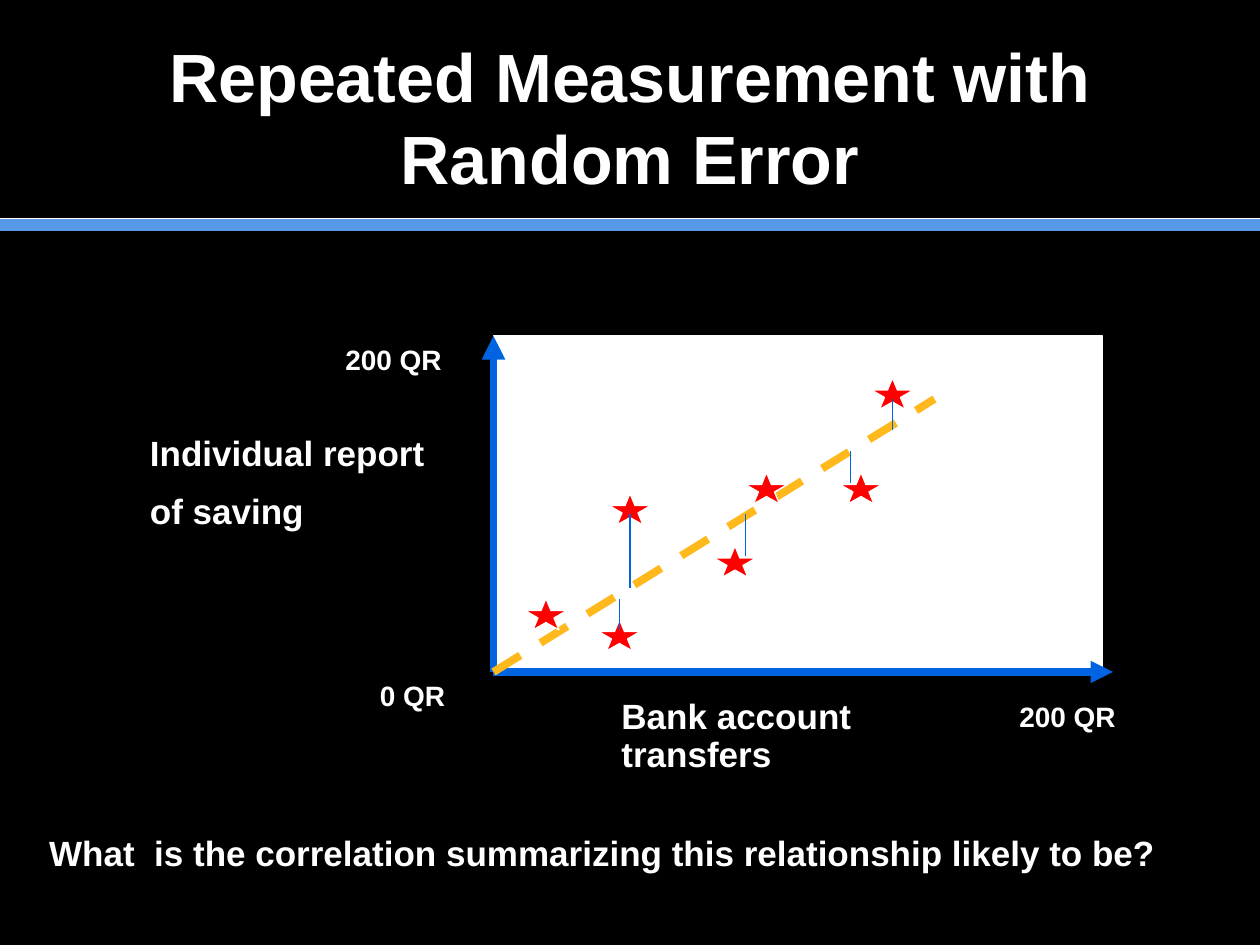
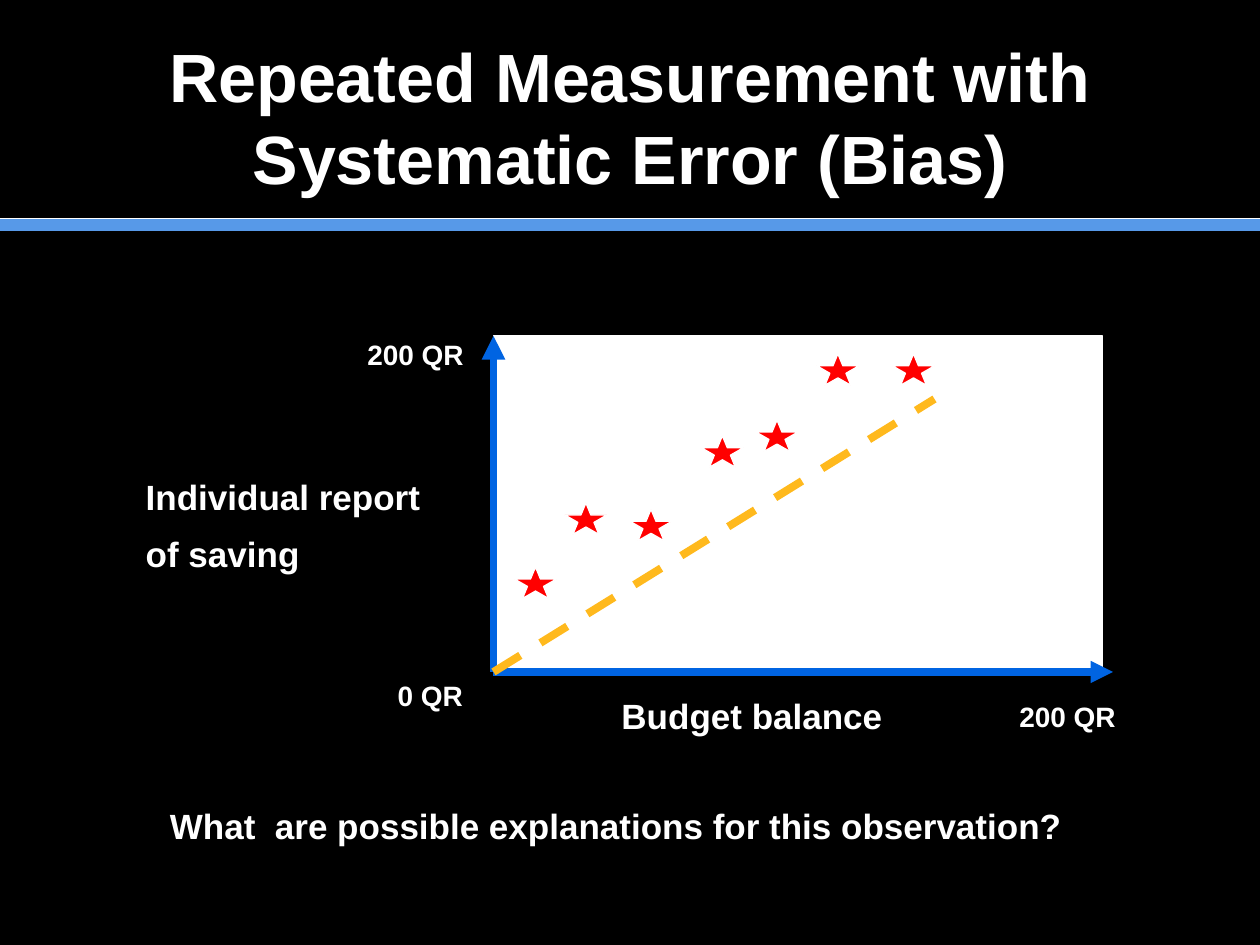
from dataclasses import dataclass
from typing import NamedTuple

from lxml.etree import SubElement
from pptx import Presentation
from pptx.dml.color import RGBColor
from pptx.enum.dml import MSO_LINE_DASH_STYLE as Dash
from pptx.enum.shapes import MSO_CONNECTOR, MSO_SHAPE
from pptx.enum.text import MSO_ANCHOR, PP_ALIGN
from pptx.oxml.ns import qn
from pptx.shapes.autoshape import Shape
from pptx.shapes.connector import Connector
from pptx.slide import Slide
from pptx.util import Inches, Pt

BLACK = RGBColor(0x00, 0x00, 0x00)
WHITE = RGBColor(0xFF, 0xFF, 0xFF)
BAND_BLUE = RGBColor(0x57, 0x99, 0xE8)
AXIS_BLUE = RGBColor(0x00, 0x64, 0xE2)
TREND_GOLD = RGBColor(0xFF, 0xB9, 0x1D)
STAR_RED = RGBColor(0xFF, 0x00, 0x00)

FONT = "Arial"
TITLE_SIZE, BODY_SIZE, TICK_SIZE = 39, 20, 16

# The grid has 120 columns and 90 rows, twelve to the inch.
CELL = Inches(1) // 12
COLUMNS, ROWS = 120, 90


class Point(NamedTuple):
    column: float
    row: float


class Box(NamedTuple):
    column: float
    row: float
    columns: float
    rows: float


class Residual(NamedTuple):
    """A vertical line from a star's row to the trend line."""
    column: float
    star_row: float
    trend_row: float
    width: float = 0.75


class Label(NamedTuple):
    text: str
    box: Box
    size: float = BODY_SIZE
    line_spacing: float | None = None


@dataclass(frozen=True)
class ScatterSlide:
    title: str
    stars: tuple[Point, ...]
    labels: tuple[Label, ...]
    residuals: tuple[Residual, ...] = ()


TITLE_BOX = Box(6, 3.6, 108, 15)
PLOT = Box(47, 32, 58, 32)
ORIGIN = Point(PLOT.column, PLOT.row + PLOT.rows)
Y_AXIS_END = Point(PLOT.column, PLOT.row)
X_AXIS_END = Point(106, ORIGIN.row)
TREND_END = Point(89, 38)
STAR_COLUMNS, STAR_ROWS = 4, 3


def report_label(column: float, row: float) -> Label:
    return Label("Individual report\nof saving", Box(column, row, 29.9, 10.5), line_spacing=0.9)


def x_label(text: str, rows: float) -> Label:
    return Label(text, Box(58, 66, 34, rows), line_spacing=0.9)


def tick(text: str, column: float, row: float) -> Label:
    return Label(text, Box(column, row, 12.4, 4.4), TICK_SIZE)


X_MAXIMUM = tick("200 QR", 95.9, 66)

SLIDES = (
    ScatterSlide(
        title="Repeated Measurement with Random Error",
        stars=(
            Point(57, 59), Point(68, 52), Point(71, 45), Point(80, 45),
            Point(83, 36), Point(58, 47), Point(50, 57),
        ),
        residuals=(
            Residual(60, 49, 56, width=1), Residual(59, 60, 57), Residual(71, 53, 49),
            Residual(81, 46, 43), Residual(85, 38, 41),
        ),
        labels=(
            report_label(13.1, 41),
            x_label("Bank account transfers", 8.5),
            Label("What  is the correlation summarizing this relationship likely to be?",
                  Box(3.5, 78.6, 116.5, 5.3)),
            tick("200 QR", 31.7, 32),
            X_MAXIMUM,
            tick("0 QR", 35, 64),
        ),
    ),
    ScatterSlide(
        title="Repeated Measurement with Systematic Error (Bias)",
        stars=(
            Point(53.8, 47.9), Point(66.8, 41.5), Point(72, 40), Point(77.8, 33.7),
            Point(85, 33.7), Point(60, 48.5), Point(49, 54),
        ),
        labels=(
            report_label(12.7, 45.1),
            tick("0 QR", 36.7, 64),
            tick("200 QR", 33.8, 31.6),
            X_MAXIMUM,
            x_label("Budget balance", 4.8),
            Label("What  are possible explanations for this observation?",
                  Box(15, 76, 105, 5.3)),
        ),
    ),
)


def lengths(cells: tuple[float, ...]) -> list[int]:
    """Turn grid cells into slide lengths."""
    return [round(cell * CELL) for cell in cells]


def add_line(slide: Slide, start: Point, end: Point, color: RGBColor, width: float) -> Connector:
    line = slide.shapes.add_connector(MSO_CONNECTOR.STRAIGHT, *lengths(start), *lengths(end))
    line.line.color.rgb = color
    line.line.width = Pt(width)
    SubElement(line._element.spPr, qn("a:effectLst"))
    return line


def add_axis(slide: Slide, end: Point, width: float) -> None:
    axis = add_line(slide, ORIGIN, end, AXIS_BLUE, width)
    SubElement(axis.line._get_or_add_ln(), qn("a:tailEnd"), type="triangle")


def add_outlined(slide: Slide, preset: MSO_SHAPE, box: Box, fill: RGBColor) -> None:
    """Add a filled shape with a thin white outline."""
    shape = slide.shapes.add_shape(preset, *lengths(box))
    shape.shadow.inherit = False
    shape.fill.solid()
    shape.fill.fore_color.rgb = fill
    shape.line.color.rgb = WHITE
    shape.line.width = Pt(0.75)


def add_label(slide: Slide, label: Label) -> Shape:
    text_box = slide.shapes.add_textbox(*lengths(label.box))
    text_frame = text_box.text_frame
    text_frame.word_wrap = True
    text_frame.text = label.text
    for index, paragraph in enumerate(text_frame.paragraphs):
        if label.line_spacing:
            paragraph.line_spacing = label.line_spacing
        if index:
            paragraph.space_before = Pt(label.size * 0.56)
        for run in paragraph.runs:
            run.font.name = FONT
            run.font.size = Pt(label.size)
            run.font.bold = True
            run.font.color.rgb = WHITE
    return text_box


def add_header(slide: Slide, title: str) -> None:
    for row, color, width in ((21.4, BAND_BLUE, 7), (20.8, WHITE, 0.5)):
        add_line(slide, Point(0, row), Point(COLUMNS, row), color, width)
    text_frame = add_label(slide, Label(title, TITLE_BOX, TITLE_SIZE)).text_frame
    text_frame.vertical_anchor = MSO_ANCHOR.MIDDLE
    text_frame.paragraphs[0].alignment = PP_ALIGN.CENTER


def add_plot(slide: Slide, content: ScatterSlide) -> None:
    add_outlined(slide, MSO_SHAPE.RECTANGLE, PLOT, WHITE)
    add_axis(slide, Y_AXIS_END, 4.5)
    add_axis(slide, X_AXIS_END, 4.25)
    trend = add_line(slide, ORIGIN, TREND_END, TREND_GOLD, 4.5)
    trend.line.dash_style = Dash.DASH
    for star in content.stars:
        add_outlined(slide, MSO_SHAPE.STAR_5_POINT, Box(*star, STAR_COLUMNS, STAR_ROWS), STAR_RED)
    for column, star_row, trend_row, width in content.residuals:
        add_line(slide, Point(column, star_row), Point(column, trend_row), AXIS_BLUE, width)


def main() -> None:
    presentation = Presentation()
    presentation.slide_width, presentation.slide_height = lengths((COLUMNS, ROWS))
    background = presentation.slide_master.background.fill
    background.solid()
    background.fore_color.rgb = BLACK
    blank_layout = presentation.slide_layouts[6]
    for content in SLIDES:
        slide = presentation.slides.add_slide(blank_layout)
        add_header(slide, content.title)
        add_plot(slide, content)
        for label in content.labels:
            add_label(slide, label)
    presentation.save("out.pptx")


if __name__ == "__main__":
    main()
